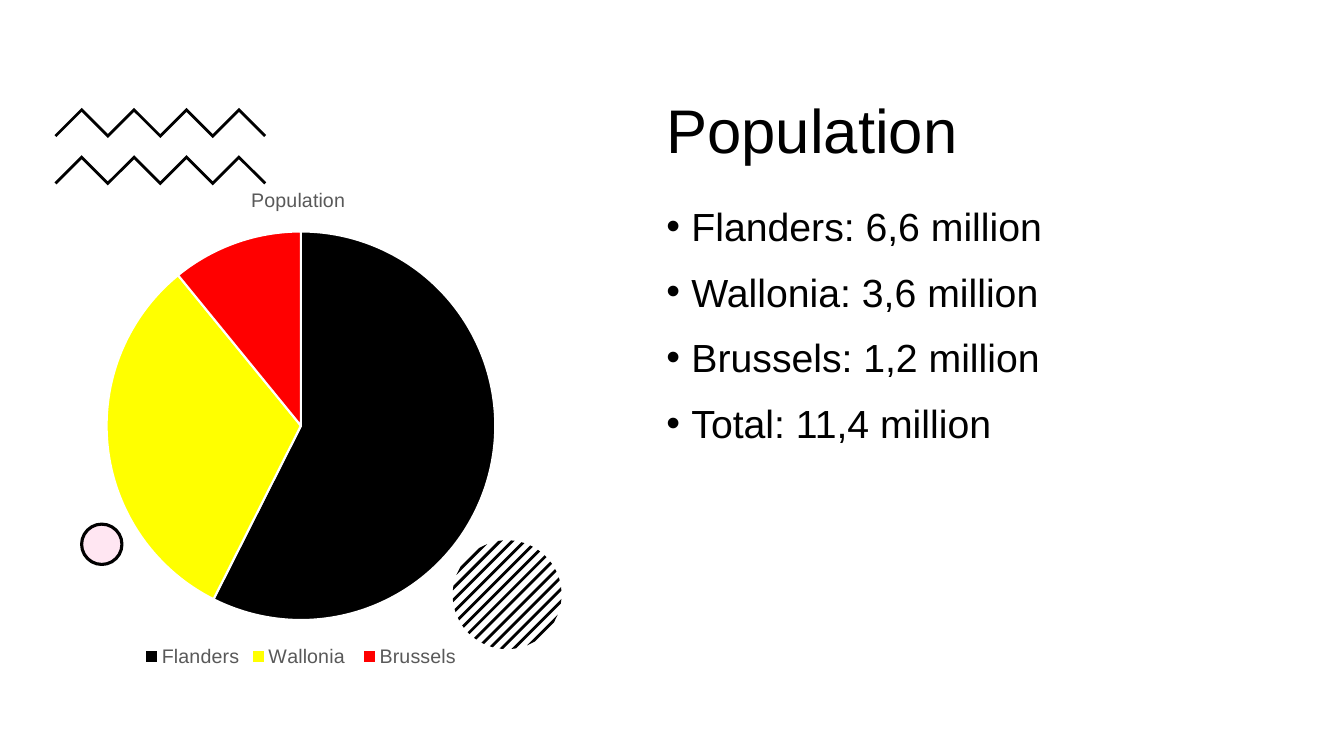
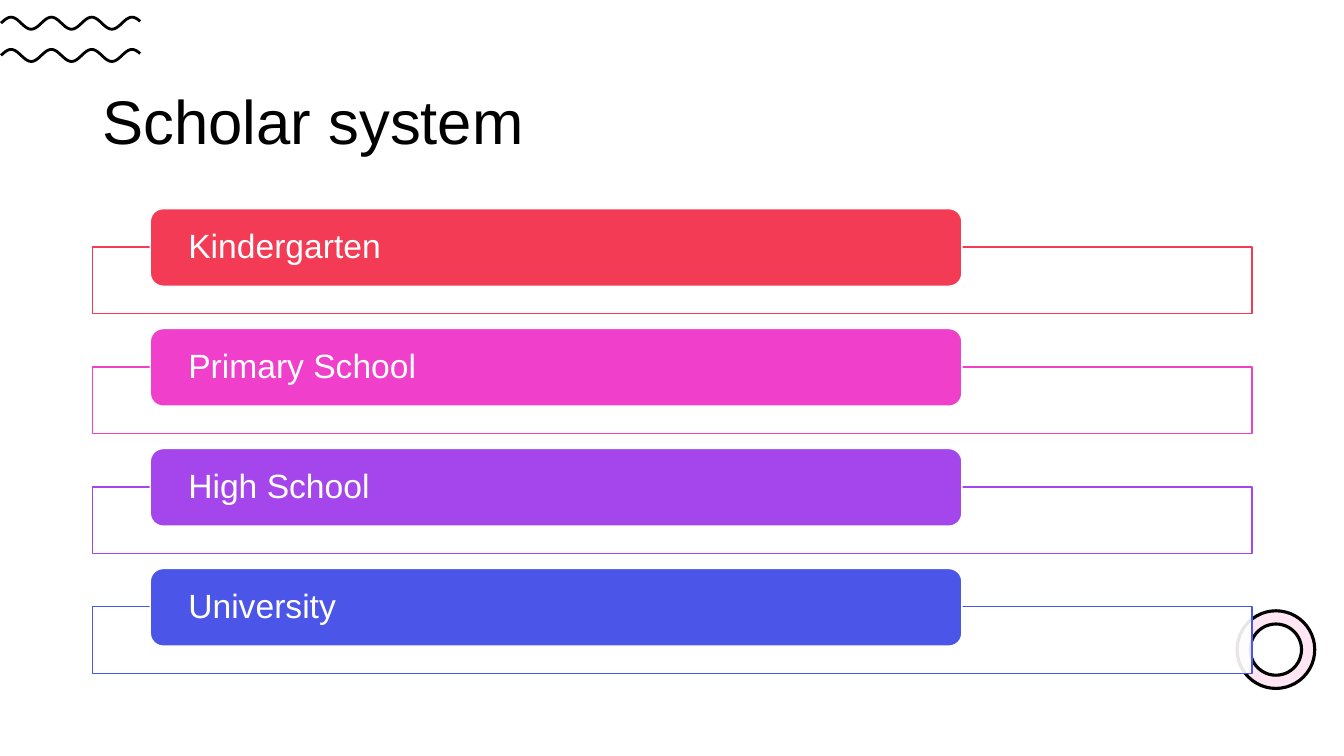
import math
from dataclasses import dataclass
from typing import Any

import lxml.etree
import pptx
import pptx.chart.data
import pptx.dml.color
import pptx.enum.chart
import pptx.enum.shapes
import pptx.enum.text
import pptx.oxml
import pptx.oxml.ns
import pptx.util

Inches = pptx.util.Inches
Pt = pptx.util.Pt
RGBColor = pptx.dml.color.RGBColor
Anchor = pptx.enum.text.MSO_ANCHOR
Align = pptx.enum.text.PP_ALIGN
Preset = pptx.enum.shapes.MSO_SHAPE
qn = pptx.oxml.ns.qn

FONT = "Arial"
BLACK = RGBColor(0x00, 0x00, 0x00)
WHITE = RGBColor(0xFF, 0xFF, 0xFF)
GRAY = RGBColor(0x59, 0x59, 0x59)
YELLOW = RGBColor(0xFF, 0xFF, 0x00)
RED = RGBColor(0xFF, 0x00, 0x00)
PALE_PINK = RGBColor(0xFF, 0xE6, 0xF2)
CORAL = RGBColor(0xF4, 0x3B, 0x56)
MAGENTA = RGBColor(0xF0, 0x40, 0xCB)
PURPLE = RGBColor(0xA5, 0x46, 0xEC)
BLUE = RGBColor(0x4B, 0x56, 0xE8)

Point = tuple[float, float]


@dataclass(frozen=True)
class Box:
    left: float
    top: float
    width: float
    height: float

    def lengths(self) -> list[int]:
        return [Inches(v) for v in (self.left, self.top, self.width, self.height)]


@dataclass(frozen=True)
class Stage:
    name: str
    color: RGBColor


@dataclass(frozen=True)
class Region:
    name: str
    share: int
    color: RGBColor


STAGES = [
    Stage("Kindergarten", CORAL),
    Stage("Primary School", MAGENTA),
    Stage("High School", PURPLE),
    Stage("University", BLUE),
]
REGIONS = [
    Region("Flanders", 58, BLACK),
    Region("Wallonia ", 32, YELLOW),
    Region("Brussels", 11, RED),
]
FACTS = [
    "Flanders: 6,6 million",
    "Wallonia: 3,6 million",
    "Brussels: 1,2 million",
    "Total: 11,4 million",
]
TITLE_FORMAT = {"line_spacing": 0.9}
FACT_FORMAT = {"line_spacing": 1.1, "space_before": Pt(10)}
STAGE_FORMAT = {"line_spacing": 0.9, "space_after": Pt(10), "alignment": Align.LEFT}


def apply(target: Any, values: dict[str, Any]) -> None:
    for name, value in values.items():
        setattr(target, name, value)


def style_font(font: Any, size: float, color: RGBColor) -> None:
    apply(font, {"name": FONT, "size": Pt(size), "bold": False})
    font.color.rgb = color


def write(shape: Any, lines: list[str], size: float, color: RGBColor, anchor: Any,
          paragraph_format: dict[str, Any], bullet: bool = False) -> None:
    frame = shape.text_frame
    apply(frame, {"word_wrap": True, "vertical_anchor": anchor})
    for index, line in enumerate(lines):
        paragraph = frame.add_paragraph() if index else frame.paragraphs[0]
        apply(paragraph, paragraph_format)
        run = paragraph.add_run()
        run.text = line
        style_font(run.font, size, color)
        if bullet:
            properties = paragraph._p.get_or_add_pPr()
            properties.set("marL", str(Inches(0.25)))
            properties.set("indent", str(-Inches(0.25)))
            lxml.etree.SubElement(properties, qn("a:buFont")).set("typeface", FONT)
            lxml.etree.SubElement(properties, qn("a:buChar")).set("char", "•")


def add_title(slide: Any, text: str, box: Box, anchor: Any) -> None:
    shape = slide.shapes.add_textbox(*box.lengths())
    write(shape, [text], 44, BLACK, anchor, TITLE_FORMAT)


def paint(shape: Any, fill: RGBColor | None, line: RGBColor | None, width: float = 1) -> None:
    shape.shadow.inherit = False
    if fill is None:
        shape.fill.background()
    else:
        shape.fill.solid()
        shape.fill.fore_color.rgb = fill
    if line is None:
        shape.line.fill.background()
    else:
        shape.line.color.rgb = line
        shape.line.width = Pt(width)


def add_shape(slide: Any, preset: Any, box: Box, fill: RGBColor,
              line: RGBColor, width: float = 1) -> Any:
    shape = slide.shapes.add_shape(preset, *box.lengths())
    paint(shape, fill, line, width)
    return shape


def add_outline(slide: Any, points: list[Point], close: bool) -> Any:
    corners = [(Inches(x), Inches(y)) for x, y in points]
    builder = slide.shapes.build_freeform(*corners[0])
    builder.add_line_segments(corners[1:], close=close)
    return builder.convert_to_shape()


def add_stroke(slide: Any, points: list[Point]) -> None:
    shape = add_outline(slide, points, close=False)
    paint(shape, None, BLACK, 2)
    line = shape._element.spPr.find(qn("a:ln"))
    lxml.etree.SubElement(line, qn("a:miter")).set("lim", "800000")


def add_zigzag(slide: Any, top: float) -> None:
    add_stroke(slide, [(0.55 + 0.26 * i, top + 0.26 * ((i + 1) % 2)) for i in range(9)])


def add_wave(slide: Any, middle: float) -> None:
    period = 0.4
    xs = [0.01 + 0.02 * i for i in range(70)]
    add_stroke(slide, [
        (x, middle - 0.06 * math.cos(math.tau * (x - 0.11) / period)) for x in xs
    ])


def add_striped_disc(slide: Any, center_x: float, center_y: float, radius: float) -> None:
    def chord(offset: float) -> list[Point]:
        reach = math.sqrt(radius ** 2 / 2 - offset ** 2)
        return [(center_x + offset + side * reach, center_y + offset - side * reach)
                for side in (-1, 1)]

    for index in range(-6, 7):
        offset = 0.06 * index
        stripe = chord(offset - 0.01) + chord(offset + 0.01)[::-1]
        paint(add_outline(slide, stripe, close=True), BLACK, None)


def add_population_chart(slide: Any, box: Box) -> None:
    data = pptx.chart.data.CategoryChartData()
    data.categories = [region.name for region in REGIONS]
    data.add_series("Series 1", [region.share for region in REGIONS])
    chart = slide.shapes.add_chart(
        pptx.enum.chart.XL_CHART_TYPE.PIE, *box.lengths(), data).chart
    style_font(chart.font, 9, BLACK)
    apply(chart, {"has_title": True, "has_legend": True})
    title = chart.chart_title.text_frame
    title.text = "Population "
    style_font(title.paragraphs[0].runs[0].font, 14, GRAY)
    apply(chart.legend, {
        "position": pptx.enum.chart.XL_LEGEND_POSITION.BOTTOM,
        "include_in_layout": False,
    })
    style_font(chart.legend.font, 14, GRAY)
    plot = chart.plots[0]
    plot.vary_by_categories = True
    for index, region in enumerate(REGIONS):
        point_format = plot.series[0].points[index].format
        point_format.fill.solid()
        point_format.fill.fore_color.rgb = region.color
        point_format.line.color.rgb = WHITE
        point_format.line.width = Pt(1.5)
    properties = pptx.oxml.parse_xml(
        '<c:spPr xmlns:c="http://schemas.openxmlformats.org/drawingml/2006/chart" '
        'xmlns:a="http://schemas.openxmlformats.org/drawingml/2006/main">'
        "<a:noFill/><a:ln><a:noFill/></a:ln></c:spPr>")
    chart.element.find(qn("c:chart")).addnext(properties)


def add_stage(slide: Any, stage: Stage, top: float) -> None:
    frame = add_shape(slide, Preset.RECTANGLE, Box(0.92, top + 0.38, 11.5, 0.66),
                      WHITE, stage.color)
    color = frame._element.spPr.find(qn("a:solidFill"))[0]
    lxml.etree.SubElement(color, qn("a:alpha")).set("val", "90000")
    label = add_shape(slide, Preset.ROUNDED_RECTANGLE, Box(1.49, top, 8.05, 0.77),
                      stage.color, WHITE)
    apply(label.text_frame, {
        "margin_left": Inches(0.34), "margin_right": Inches(0.34),
        "margin_top": Inches(0.04), "margin_bottom": Inches(0.04),
    })
    write(label, [stage.name], 24, WHITE, Anchor.MIDDLE, STAGE_FORMAT)


def build_population(slide: Any) -> None:
    add_title(slide, "Population", Box(6.51, 0.43, 5.71, 1.27), Anchor.BOTTOM)
    for top in (1.09, 1.56):
        add_zigzag(slide, top)
    add_shape(slide, Preset.OVAL, Box(0.81, 5.2, 0.4, 0.4), PALE_PINK, BLACK, 2.25)
    add_striped_disc(slide, 5.03, 5.9, 0.54)
    facts = slide.shapes.add_textbox(*Box(6.51, 1.91, 5.71, 4.76).lengths())
    write(facts, FACTS, 28, BLACK, Anchor.TOP, FACT_FORMAT, bullet=True)
    add_population_chart(slide, Box(-0.38, 1.67, 6.73, 4.99))


def build_scholar_system(slide: Any) -> None:
    add_title(slide, "Scholar system", Box(0.92, 0.62, 11.5, 1.23), Anchor.MIDDLE)
    for middle in (0.23, 0.55):
        add_wave(slide, middle)
    ring = add_shape(slide, Preset.DONUT, Box(12.27, 6.06, 0.77, 0.77),
                     PALE_PINK, BLACK, 2.25)
    ring.adjustments[0] = 0.17
    for index, stage in enumerate(STAGES):
        add_stage(slide, stage, 2.07 + 1.19 * index)


def main() -> None:
    presentation = pptx.Presentation()
    apply(presentation, {"slide_width": Inches(13.33), "slide_height": Inches(7.5)})
    for build in (build_population, build_scholar_system):
        slide = presentation.slides.add_slide(presentation.slide_layouts[6])
        slide.background.fill.solid()
        slide.background.fill.fore_color.rgb = WHITE
        build(slide)
    presentation.save("out.pptx")


if __name__ == "__main__":
    main()
